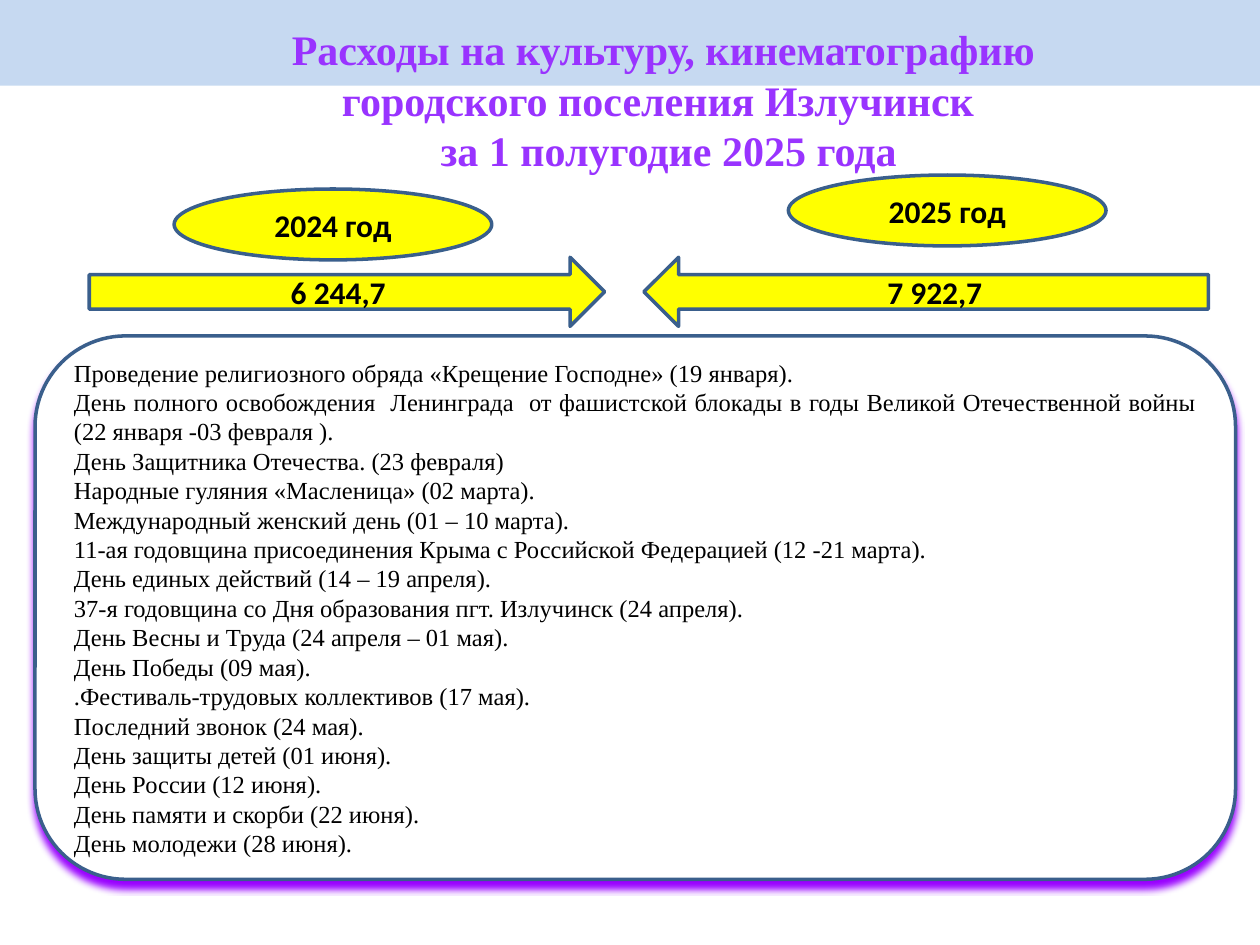
from dataclasses import dataclass

import lxml.etree
import pptx
import pptx.dml.color
import pptx.enum.shapes
import pptx.enum.text
import pptx.oxml.ns
import pptx.util

Pt = pptx.util.Pt
SHAPE = pptx.enum.shapes.MSO_SHAPE
ALIGN = pptx.enum.text.PP_ALIGN
ANCHOR = pptx.enum.text.MSO_ANCHOR
qn = pptx.oxml.ns.qn


@dataclass(frozen=True)
class Theme:
    """Colours, fonts and type sizes of the slide."""
    band: str = "C6D9F1"
    title: str = "9933FF"
    accent: str = "FFFF00"
    outline: str = "3A5F8C"
    glow: str = "9900FF"
    paper: str = "FFFFFF"
    ink: str = "000000"
    serif: str = "Times New Roman"
    sans: str = "Calibri"
    title_size: float = 24
    figure_size: float = 18
    body_size: float = 14
    line_width: float = 2


THEME = Theme()
TITLE = ("Расходы на культуру, кинематографию \vгородского поселения Излучинск  \v"
         "за 1 полугодие 2025 года")
EVENTS = [
    "Проведение религиозного обряда «Крещение Господне» (19 января).",
    "День полного освобождения  Ленинграда  от фашистской блокады в годы "
    "Великой Отечественной войны (22 января -03 февраля ).",
    "День Защитника Отечества. (23 февраля)",
    "Народные гуляния «Масленица» (02 марта).",
    "Международный женский день (01 – 10 марта).",
    "11-ая годовщина присоединения Крыма с Российской Федерацией (12 -21 марта). ",
    "День единых действий (14 – 19 апреля). ",
    "37-я годовщина со Дня образования пгт. Излучинск (24 апреля). ",
    "День Весны и Труда (24 апреля – 01 мая).",
    "День Победы (09 мая).",
    ".Фестиваль-трудовых коллективов (17 мая).",
    "Последний звонок (24 мая).",
    "День защиты детей (01 июня).",
    "День России (12 июня).",
    "День памяти и скорби (22 июня).",
    "День молодежи (28 июня).",
]


def rgb(value):
    """Turn a hex string into a colour."""
    return pptx.dml.color.RGBColor.from_string(value)


def write(sp, *paragraphs, font=THEME.sans, size=THEME.figure_size, color=THEME.ink,
          bold=False, align=ALIGN.CENTER, anchor=ANCHOR.MIDDLE):
    """Write the paragraphs into a shape with one format."""
    tf = sp.text_frame
    tf.word_wrap = True
    tf.vertical_anchor = anchor
    for i, text in enumerate(paragraphs):
        p = tf.paragraphs[0] if i == 0 else tf.add_paragraph()
        p.text = text
        p.alignment = align
        for r in p.runs:
            r.font.name = font
            r.font.size = Pt(size)
            r.font.bold = bold
            r.font.color.rgb = rgb(color)


def add_shape(s, kind, box, fill, line=THEME.outline):
    """Add a flat filled shape, outlined unless line is None."""
    sp = s.shapes.add_shape(kind, *map(Pt, box))
    sp.fill.solid()
    sp.fill.fore_color.rgb = rgb(fill)
    if line:
        sp.line.color.rgb = rgb(line)
        sp.line.width = Pt(THEME.line_width)
    else:
        sp.line.fill.background()
    sp.shadow.inherit = False
    return sp


def add_header(s, band, box):
    """Place the top band and the title over it."""
    add_shape(s, SHAPE.RECTANGLE, band, THEME.band, line=None)
    write(s.shapes.add_textbox(*map(Pt, box)), TITLE, font=THEME.serif,
          size=THEME.title_size, color=THEME.title, bold=True, anchor=ANCHOR.TOP)


def add_year(s, box, year, amount, oval_offset, flipped=False):
    """Place an amount arrow in the box and its year oval at an offset from it."""
    x, y, _, _ = box
    dx, dy = oval_offset
    arrow = add_shape(s, SHAPE.RIGHT_ARROW, box, THEME.accent)
    if flipped:
        arrow._element.spPr.find(qn("a:xfrm")).set("flipH", "1")
    write(arrow, amount, bold=True)
    oval = add_shape(s, SHAPE.OVAL, (x + dx, y + dy, 181.5, 40.5), THEME.accent)
    write(oval, year, bold=True)


def add_events(s, box):
    """Place the rounded panel with the list of events and its coloured shadow."""
    sp = add_shape(s, SHAPE.ROUNDED_RECTANGLE, box, THEME.paper)
    effects = sp._element.spPr.find(qn("a:effectLst"))
    shadow = lxml.etree.SubElement(
        effects, qn("a:outerShdw"), blurRad=str(Pt(4)), dist=str(Pt(4)),
        dir=str(90 * 60000), algn="t", rotWithShape="0")
    lxml.etree.SubElement(shadow, qn("a:srgbClr"), val=THEME.glow)
    write(sp, *EVENTS, font=THEME.serif, size=THEME.body_size, align=ALIGN.JUSTIFY)


def main():
    """Build the slide and save it."""
    prs = pptx.Presentation()
    prs.slide_width, prs.slide_height = Pt(720), Pt(540)
    s = prs.slides.add_slide(prs.slide_layouts[6])
    add_header(s, (0, 0, 720, 49), (75, 10, 614, 90))
    add_year(s, (51, 147, 294.5, 39.5), "2024 год", "6 244,7", (48.5, -39))
    add_year(s, (368, 147, 322.5, 39.5), "2025 год", "7 922,7", (82.5, -47), flipped=True)
    add_events(s, (20, 192, 686, 310.5))
    prs.save("out.pptx")


if __name__ == "__main__":
    main()
